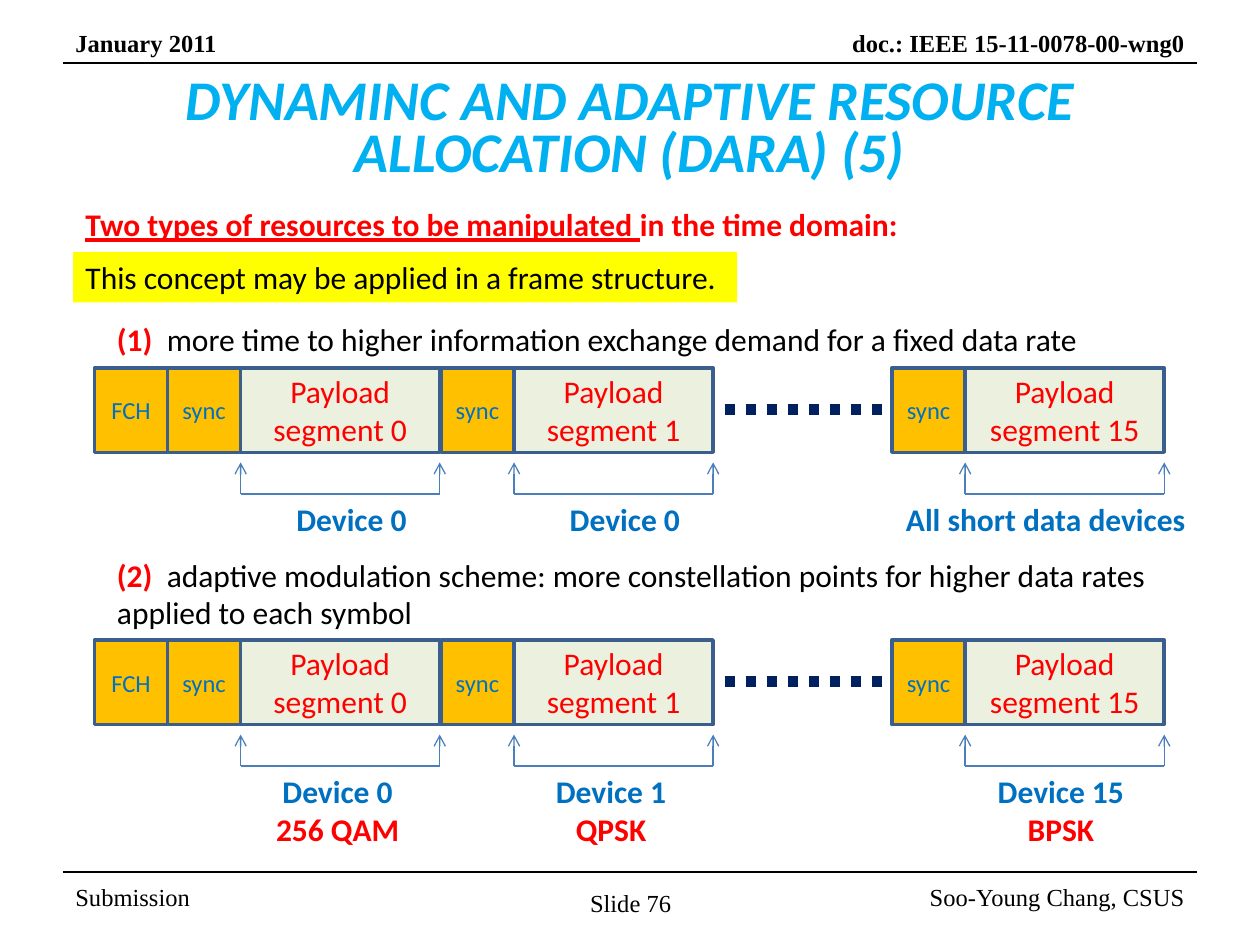
from lxml import etree
from pptx import Presentation
from pptx import util as u
from pptx.dml.color import RGBColor
from pptx.enum import dml, shapes, text
from pptx.oxml.ns import qn

SERIF = {"name": "Times New Roman", "size": 14, "color": "000000"}
BODY = {"name": "Calibri", "size": 18, "color": "000000"}
RED = BODY | {"color": "FF0000"}
RED_BOLD = RED | {"bold": True}
BLUE_BOLD = BODY | {"color": "0070C0", "bold": True}
SYNC = BODY | {"size": 14, "color": "0070C0"}
LEFT, CENTER, RIGHT = text.PP_ALIGN.LEFT, text.PP_ALIGN.CENTER, text.PP_ALIGN.RIGHT
TOP, MIDDLE = text.MSO_ANCHOR.TOP, text.MSO_ANCHOR.MIDDLE

deck = Presentation()
deck.slide_width, deck.slide_height = u.Inches(10), u.Inches(7.5)
page = deck.slides.add_slide(deck.slide_layouts[6])


def add_box(at, paras, align=LEFT, anchor=TOP, wrap=True, fill=None, line=None):
    """Text box, or a rectangle when filled; each para is a list of (words, format)."""
    place = [u.Inches(value) for value in at]
    if fill:
        box = page.shapes.add_shape(shapes.MSO_SHAPE.RECTANGLE, *place)
        box.shadow.inherit = False
        box.fill.solid()
        box.fill.fore_color.rgb = RGBColor.from_string(fill)
        if line:
            box.line.color.rgb = RGBColor.from_string(line)
            box.line.width = u.Pt(2)
        else:
            box.line.fill.background()
    else:
        box = page.shapes.add_textbox(*place)
    frame = box.text_frame
    frame.word_wrap, frame.vertical_anchor = wrap, anchor
    for number, runs in enumerate(paras):
        para = frame.add_paragraph() if number else frame.paragraphs[0]
        para.alignment = align
        for words, look in runs:
            span = para.add_run()
            span.text = words
            for key, value in look.items():
                if key == "color":
                    span.font.color.rgb = RGBColor.from_string(value)
                else:
                    setattr(span.font, key, u.Pt(value) if key == "size" else value)
    return box


def add_line(x1, y1, x2, y2, color="000000", width=0.75, dash=None, arrow=False):
    ends = [u.Inches(value) for value in (x1, y1, x2, y2)]
    line = page.shapes.add_connector(shapes.MSO_CONNECTOR.STRAIGHT, *ends)
    line.line.color.rgb = RGBColor.from_string(color)
    line.line.width = u.Pt(width)
    if dash:
        line.line.dash_style = dash
    if arrow:
        etree.SubElement(line.line._get_or_add_ln(), qn("a:tailEnd"), type="arrow")
    etree.SubElement(line._element.spPr, qn("a:effectLst"))


# Header and footer
add_line(0.5, 0.5, 9.5, 0.5)
add_line(0.5, 6.92, 9.5, 6.92)
serif_bold = SERIF | {"bold": True}
add_box((0.5, 0.17, 1.42, 0.34), [[("January 2011", serif_bold)]])
add_box((5.92, 0.17, 3.58, 0.34), [[("doc.: IEEE 15-11-0078-00-wng0", serif_bold)]], RIGHT)
add_box((0.5, 6.92, 2.33, 0.4), [[("Submission", SERIF)]], anchor=MIDDLE)
add_box((7.17, 6.92, 2.33, 0.4), [[("Soo-Young Chang, CSUS", SERIF)]], RIGHT, MIDDLE)
add_box((4.58, 7, 0.85, 0.34), [[("Slide 76", SERIF)]], CENTER, wrap=False)

# Title
title_look = BODY | {"size": 32, "color": "00B0F0", "bold": True, "italic": True}
title = add_box((0.5, 0.42, 9, 1.25),
                [[("DYNAMINC AND ADAPTIVE RESOURCE ALLOCATION (DARA) (5)", title_look)]],
                CENTER, MIDDLE)
title.text_frame.paragraphs[0].line_spacing = u.Pt(30)

# Heading, highlighted remark and the two numbered items
add_box((0.58, 1.58, 8.92, 0.4),
        [[("Two types of resources to be manipulated ", RED_BOLD | {"underline": True}),
          ("in the time domain:", RED_BOLD)]])
add_box((0.58, 2, 5.27, 0.4),
        [[("This concept may be applied in a frame structure.", BODY)]],
        wrap=False, fill="FFFF00")
add_box((0.83, 2.49, 8.67, 0.4),
        [[("(1)  ", RED_BOLD),
          ("more time to higher information exchange demand for a fixed data rate", BODY)]])
add_box((0.83, 4.36, 8.67, 0.71),
        [[("(2)  ", RED_BOLD),
          ("adaptive modulation scheme: more constellation points for higher data rates "
           "applied to each symbol", BODY)]])

# Frame diagrams: top edge, then (label centre, label lines) under each payload
SYNC_W, PAYLOAD_W, FRAME_H = 0.58, 1.58, 0.67
segments = [(1.33, "0"), (3.5, "1"), (7.08, "15")]
frames = [
    (2.92, [(2.79, ["Device 0"]), (4.96, ["Device 0"]), (8.3, ["All short data devices"])]),
    (5.08, [(2.68, ["Device 0", "256 QAM"]), (4.85, ["Device 1", "QPSK"]),
            (8.42, ["Device 15", "BPSK"])]),
]
for top, labels in frames:
    edge = {"align": CENTER, "anchor": MIDDLE, "line": "3A5F8C"}
    add_box((0.75, top, SYNC_W, FRAME_H), [[("FCH", SYNC)]], fill="FFC000", **edge)
    for (left, number), (middle, lines) in zip(segments, labels):
        start = left + SYNC_W
        end = start + PAYLOAD_W
        add_box((left, top, SYNC_W, FRAME_H), [[("sync", SYNC)]], fill="FFC000", **edge)
        add_box((start, top, PAYLOAD_W, FRAME_H), [[(f"Payload segment {number}", RED)]],
                fill="EBF1DE", **edge)

        # Bracket with an arrow up to each end of the payload
        base = top + 1
        add_line(start, base, end, base, "4B7EBC")
        for x in (start, end):
            add_line(x, base, x, base - 0.25, "4B7EBC", arrow=True)

        # Device name in blue, modulation in red
        width = 2.44 if len(lines[0]) > 10 else 1.2
        paras = [[(words, look)] for words, look in zip(lines, (BLUE_BOLD, RED_BOLD))]
        add_box((middle - width / 2, base, width, 0.09 + 0.31 * len(lines)), paras,
                CENTER, wrap=False)

    # Dots for the segments left out
    add_line(5.75, top + 0.33, 7, top + 0.33, "002060", 6, dml.MSO_LINE.ROUND_DOT)

deck.save("out.pptx")
